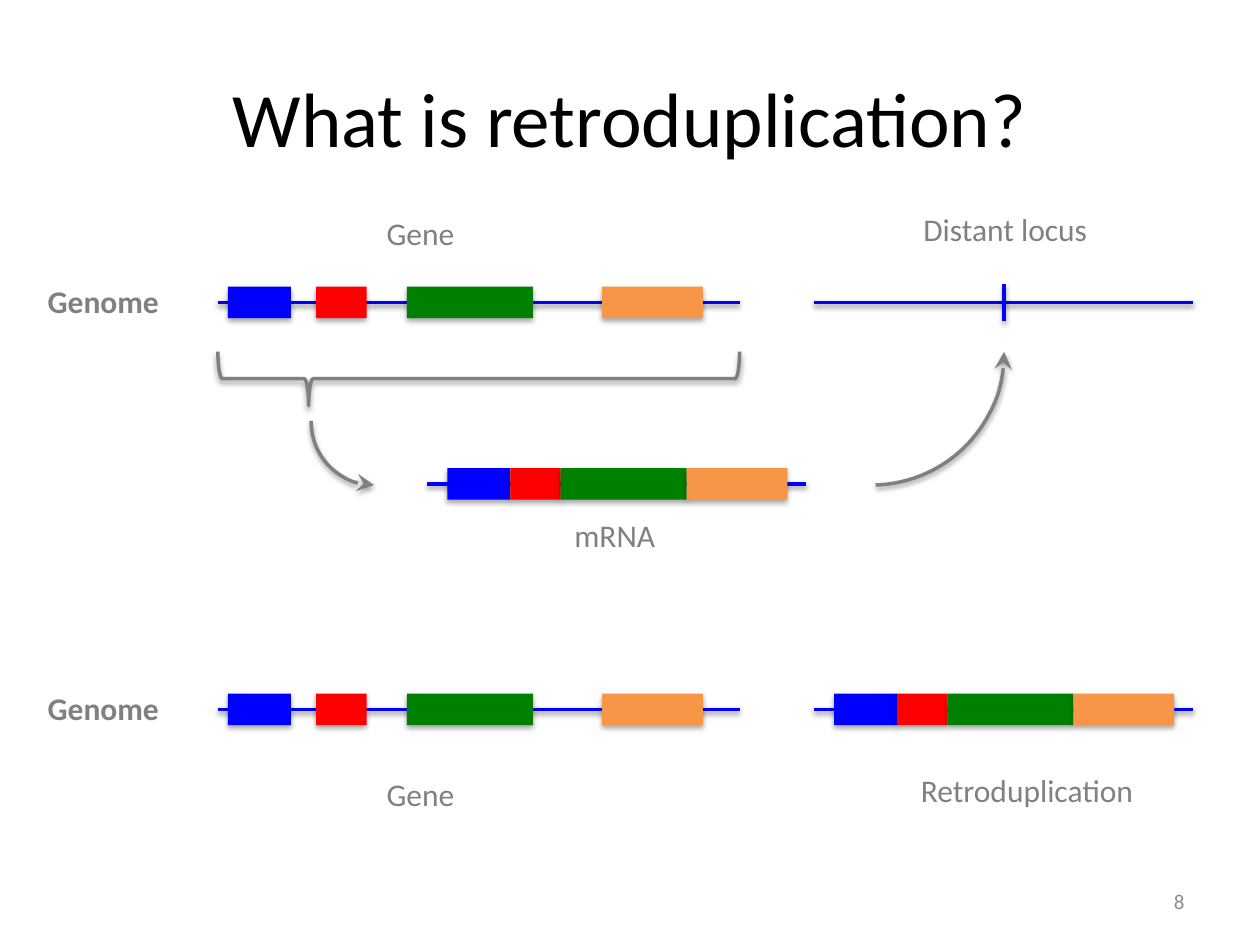
"""Build a slide that explains retroduplication of a gene through its mRNA."""
import dataclasses
import itertools

import pptx
import pptx.dml.color
import pptx.enum.shapes
import pptx.enum.text
import pptx.oxml
import pptx.oxml.ns
import pptx.util

Inches = pptx.util.Inches
Pt = pptx.util.Pt
RGB = pptx.dml.color.RGBColor.from_string
SHAPE = pptx.enum.shapes.MSO_SHAPE
ALIGN = pptx.enum.text.PP_ALIGN
ANCHOR = pptx.enum.text.MSO_ANCHOR
AUTO_SIZE = pptx.enum.text.MSO_AUTO_SIZE


@dataclasses.dataclass(frozen=True)
class Theme:
    font: str = "Calibri"
    title: str = "000000"
    label: str = "808080"
    number: str = "8C8C8C"
    strand: str = "0000FF"
    exons: tuple = ("0000FF", "FF0000", "008000", "F79646")
    title_size: int = 44
    label_size: int = 18
    number_size: int = 12
    line_width: int = 2


EXON_WIDTHS = (0.5, 0.4, 1, 0.8)
EXON_HEIGHT = 0.25
GENE_LENGTH, GENE_OFFSETS = 4.14, (0.08, 0.78, 1.5, 3.05)
LOCUS_LENGTH = 3.01
SPLICED_OFFSETS = tuple(itertools.accumulate(EXON_WIDTHS[:-1], initial=0.16))
GENE_LEFT, LOCUS_LEFT, MRNA_LEFT = 1.73, 6.46, 3.39
BEFORE_Y, MRNA_Y, AFTER_Y = 2.4, 3.84, 5.63


class Diagram:
    """Draws styled elements on one slide."""

    def __init__(self, slide, theme):
        self.shapes = slide.shapes
        self.theme = theme

    def shadow(self, sp, alpha, dist):
        sp.element.spPr.append(pptx.oxml.parse_xml(
            f'<a:effectLst {pptx.oxml.ns.nsdecls("a")}>'
            f'<a:outerShdw blurRad="{Pt(3.1)}" dist="{Pt(dist)}" dir="5400000" rotWithShape="0">'
            f'<a:srgbClr val="000000"><a:alpha val="{alpha * 1000}"/></a:srgbClr>'
            '</a:outerShdw></a:effectLst>'))

    def stroke(self, sp, color):
        sp.line.color.rgb = RGB(color)
        sp.line.width = Pt(self.theme.line_width)
        self.shadow(sp, 38, 1.6)

    def text(self, text, left, top, width, height, size, color, align):
        sp = self.shapes.add_textbox(*map(Inches, (left, top, width, height)))
        tf = sp.text_frame
        tf.word_wrap = True
        tf.vertical_anchor = ANCHOR.MIDDLE
        p = tf.paragraphs[0]
        p.text = text
        p.alignment = align
        p.font.name = self.theme.font
        p.font.size = Pt(size)
        p.font.color.rgb = RGB(color)
        return sp

    def label(self, text, left, top, width, bold=False):
        sp = self.text(text, left, top, width, 0.4, self.theme.label_size,
                       self.theme.label, ALIGN.LEFT)
        tf = sp.text_frame
        tf.word_wrap = False
        tf.auto_size = AUTO_SIZE.SHAPE_TO_FIT_TEXT
        tf.vertical_anchor = ANCHOR.TOP
        tf.paragraphs[0].font.bold = bold

    def line(self, x1, y1, x2, y2):
        sp = self.shapes.add_connector(pptx.enum.shapes.MSO_CONNECTOR.STRAIGHT,
                                       *map(Inches, (x1, y1, x2, y2)))
        self.stroke(sp, self.theme.strand)

    def exon(self, left, y, width, color):
        sp = self.shapes.add_shape(SHAPE.RECTANGLE, Inches(left), Inches(y - EXON_HEIGHT / 2),
                                   Inches(width), Inches(EXON_HEIGHT))
        sp.fill.solid()
        sp.fill.fore_color.rgb = RGB(color)
        sp.line.fill.background()
        self.shadow(sp, 35, 1.8)

    def strand(self, left, y, length, offsets=()):
        self.line(left, y, left + length, y)
        for offset, width, color in zip(offsets, EXON_WIDTHS, self.theme.exons):
            self.exon(left + offset, y, width, color)

    def outline(self, kind, left, top, width, height, adjustments):
        sp = self.shapes.add_shape(kind, *map(Inches, (left, top, width, height)))
        for i, value in enumerate(adjustments):
            sp.adjustments[i] = value
        sp.fill.background()
        self.stroke(sp, self.theme.label)
        return sp

    def brace(self, left, top, width, height):
        sp = self.outline(SHAPE.LEFT_BRACE, left + (width - height) / 2,
                          top - (width - height) / 2, height, width, (0.083, 0.174))
        sp.rotation = 270

    def arc_arrow(self, left, top, size, start, end):
        sp = self.outline(SHAPE.ARC, left, top, size, size, (start * 0.6, end * 0.6))
        sp.line._get_or_add_ln().append(pptx.oxml.parse_xml(
            f'<a:headEnd {pptx.oxml.ns.nsdecls("a")} type="stealth" w="lg" len="lg"/>'))


def main():
    prs = pptx.Presentation()
    prs.slide_width, prs.slide_height = Inches(10), Inches(7.5)
    theme = Theme()
    d = Diagram(prs.slides.add_slide(prs.slide_layouts[6]), theme)

    d.text("What is retroduplication?", 0.5, 0.3, 9, 1.25,
           theme.title_size, theme.title, ALIGN.CENTER)
    for y in (BEFORE_Y, AFTER_Y):
        d.strand(GENE_LEFT, y, GENE_LENGTH, GENE_OFFSETS)
        d.label("Genome", 0.28, y - 0.21, 1.1, bold=True)
    d.strand(LOCUS_LEFT, BEFORE_Y, LOCUS_LENGTH)
    d.strand(LOCUS_LEFT, AFTER_Y, LOCUS_LENGTH, SPLICED_OFFSETS)
    d.strand(MRNA_LEFT, MRNA_Y, LOCUS_LENGTH, SPLICED_OFFSETS)
    d.line(7.97, 2.55, 7.97, 2.25)

    d.brace(GENE_LEFT, 2.79, GENE_LENGTH, 0.43)
    d.arc_arrow(2.47, 2.85, 1, 90, 181)
    d.arc_arrow(5.87, 1.75, 2.1, 359.6, 88.4)

    for text, left, top, width in (
        ("Gene", 2.97, 1.65, 0.75),
        ("Distant locus", 7.23, 1.62, 1.52),
        ("mRNA", 4.46, 4.05, 0.85),
        ("Gene", 2.97, 6.1, 0.75),
        ("Retroduplication", 7.21, 6.07, 1.92),
    ):
        d.label(text, left, top, width)
    d.text("8", 7.17, 6.95, 2.33, 0.4, theme.number_size, theme.number, ALIGN.RIGHT)

    prs.save("out.pptx")


if __name__ == "__main__":
    main()
